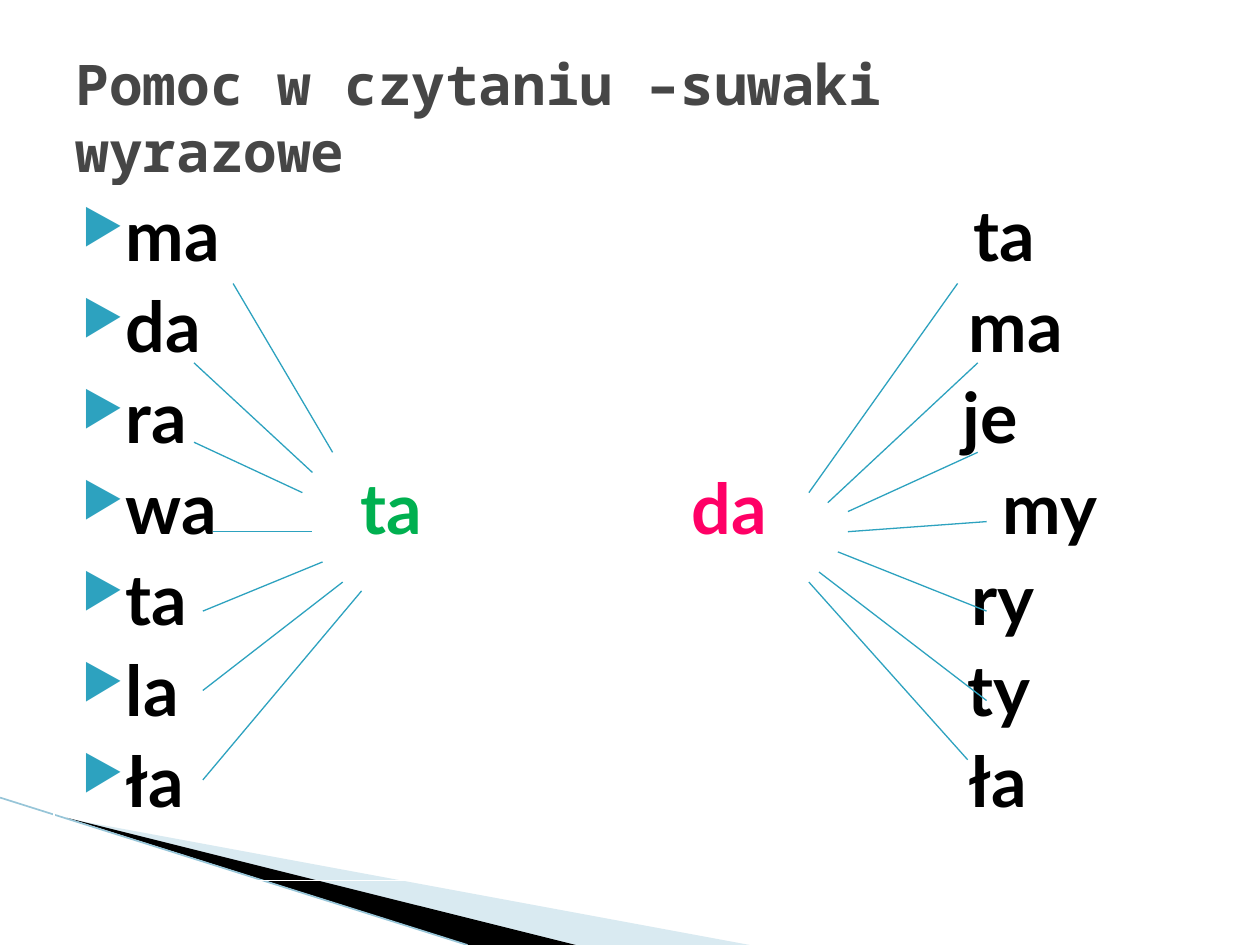
from lxml.etree import SubElement
from pptx import Presentation
from pptx.dml.color import RGBColor
from pptx.enum.shapes import MSO_CONNECTOR
from pptx.enum.text import MSO_ANCHOR, PP_ALIGN
from pptx.oxml.ns import qn
from pptx.util import Inches, Pt

TITLE = "Pomoc w czytaniu –suwaki wyrazowe"
TEAL, BLACK, WHITE = "2DA2BF", "000000", "FFFFFF"
GREEN, PINK = "00B050", "FF0066"
ROWS = [
    [("ma", 0, BLACK), ("ta", 7.2, BLACK)],
    [("da", 0, BLACK), ("ma", 7.16, BLACK)],
    [("ra", 0, BLACK), ("je", 7.11, BLACK)],
    [("wa", 0, BLACK), ("ta", 2.33, GREEN), ("da", 4.96, PINK), ("my", 7.43, BLACK)],
    [("ta", 0, BLACK), ("ry", 7.18, BLACK)],
    [("la", 0, BLACK), ("ty", 7.15, BLACK)],
    [("ła", 0, BLACK), ("ła", 7.16, BLACK)],
]
LINKS = [
    (6.42, 3.91, 7.6, 2.25), (6.57, 3.99, 7.76, 2.88), (6.73, 4.06, 7.76, 3.59),
    (6.73, 4.22, 7.83, 4.14), (6.65, 4.38, 7.83, 4.85), (6.5, 4.54, 7.83, 5.56),
    (6.42, 4.62, 7.68, 6.03), (1.85, 2.25, 2.64, 3.59), (1.54, 2.88, 2.48, 3.75),
    (1.54, 3.51, 2.4, 3.91), (1.69, 4.22, 2.48, 4.22), (1.61, 4.85, 2.56, 4.46),
    (1.61, 5.48, 2.72, 4.62), (1.61, 6.19, 2.87, 4.69),
]
WEDGES = [
    ([(0.55, 6.5), (5.95, 7.5), (4.56, 7.5)], "A0CBDC", 40),
    ([(0.53, 6.49), (4.57, 7.5), (3.72, 7.5)], BLACK, 100),
]


def paint(item, color):
    item.rgb = RGBColor.from_string(color)


def style(font, face, size, color):
    font.name, font.size, font.bold = face, Pt(size), True
    paint(font.color, color)


def add_wedge(shapes, points, color, alpha):
    spots = [(Inches(x), Inches(y)) for x, y in points]
    form = shapes.build_freeform(*spots[0])
    form.add_line_segments(spots[1:])
    wedge = form.convert_to_shape()
    wedge.shadow.inherit = False
    wedge.fill.solid()
    paint(wedge.fill.fore_color, color)
    wedge.line.fill.background()
    if alpha < 100:
        tone = wedge.fill._xPr.find(".//" + qn("a:srgbClr"))
        SubElement(tone, qn("a:alpha"), val=str(alpha * 1000))


def add_line(shapes, ends, color, width):
    line = shapes.add_connector(MSO_CONNECTOR.STRAIGHT, *map(Inches, ends))
    paint(line.line.color, color)
    line.line.width = Pt(width)
    SubElement(line._element.spPr, qn("a:effectLst"))


def add_bullet(para, stops):
    props = para._p.get_or_add_pPr()
    props.set("marL", str(Inches(0.4)))
    props.set("indent", str(Inches(-0.28)))
    tone = SubElement(props, qn("a:buClr"))
    SubElement(tone, qn("a:srgbClr"), val=TEAL)
    SubElement(props, qn("a:buSzPct"), val="68000")
    SubElement(props, qn("a:buChar"), char="▶")
    tabs = SubElement(props, qn("a:tabLst"))
    for stop in stops:
        SubElement(tabs, qn("a:tab"), pos=str(Inches(stop)), algn="l")


def add_words(shapes):
    box = shapes.add_textbox(Inches(0.43), Inches(1.47), Inches(9), Inches(5.52))
    paint(box.line.color, WHITE)
    box.line.width = Pt(0.75)
    frame = box.text_frame
    frame.word_wrap = True
    for i, row in enumerate(ROWS):
        para = frame.add_paragraph() if i else frame.paragraphs[0]
        add_bullet(para, [stop for _, stop, _ in row[1:]])
        para.space_before = Pt(4 if i else 0)
        for word, stop, color in row:
            run = para.add_run()
            run.text = "\t" + word if stop else word
            style(run.font, "Lato", 40, color)


def set_title(title):
    title.left, title.top = Inches(0.5), Inches(0.3)
    title.width, title.height = Inches(9), Inches(1.25)
    frame = title.text_frame
    frame.text = TITLE
    frame.word_wrap = True
    frame.vertical_anchor = MSO_ANCHOR.MIDDLE
    para = frame.paragraphs[0]
    para.alignment = PP_ALIGN.LEFT
    style(para.runs[0].font, "Noto Sans Mono", 32, "464646")


def main():
    """Build the word slider slide."""
    deck = Presentation()
    deck.slide_width, deck.slide_height = Inches(10), Inches(7.5)
    slide = deck.slides.add_slide(deck.slide_layouts[5])
    shapes = slide.shapes
    set_title(shapes.title)
    for wedge in WEDGES:
        add_wedge(shapes, *wedge)
    add_line(shapes, (0, 6.33, 3.71, 7.5), "97C5D8", 0.95)
    add_words(shapes)
    for ends in LINKS:
        add_line(shapes, ends, TEAL, 0.75)
    deck.save("out.pptx")


if __name__ == "__main__":
    main()
